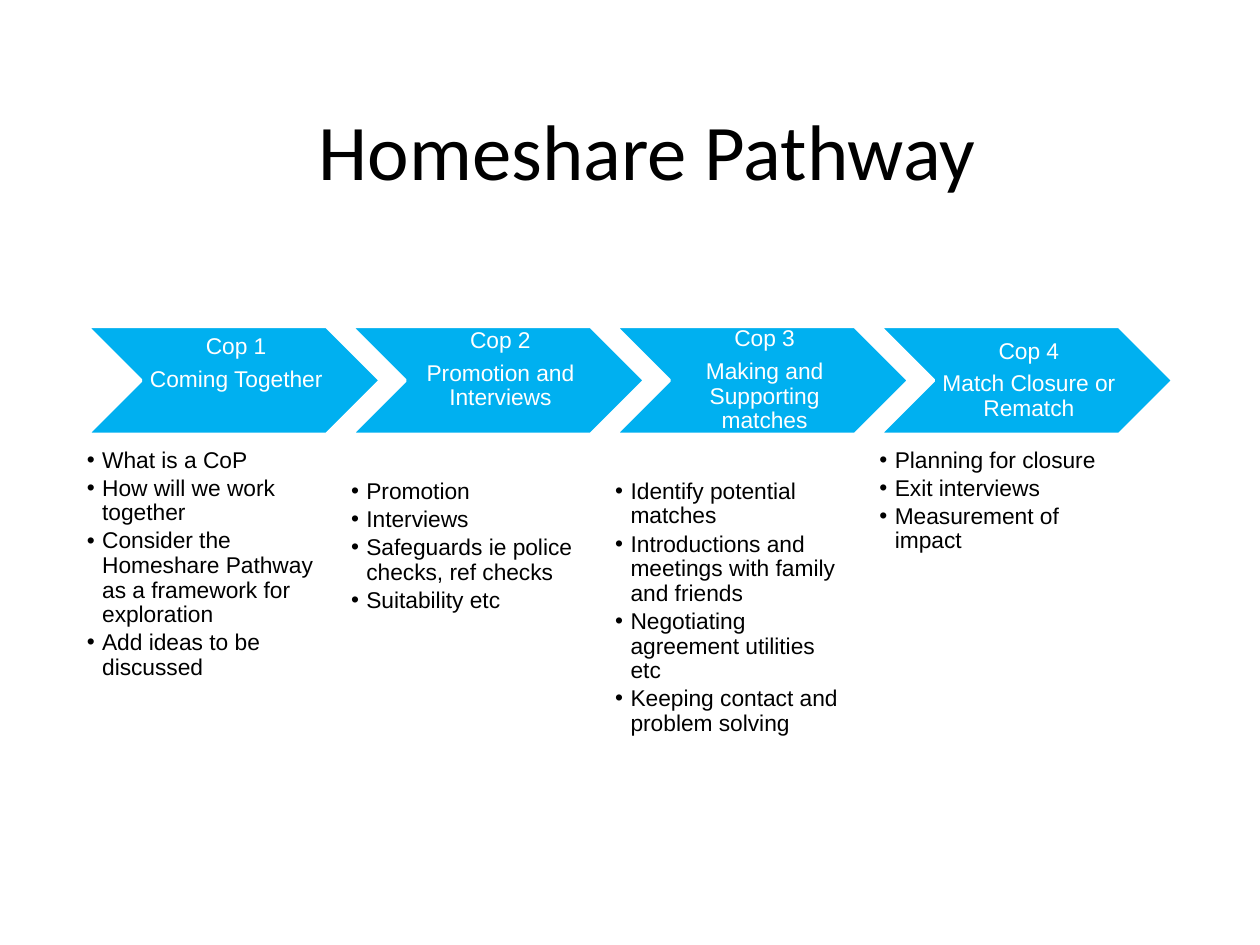
from lxml.etree import SubElement
from pptx import Presentation
from pptx.dml.color import RGBColor
from pptx.enum.shapes import MSO_SHAPE
from pptx.enum.text import MSO_ANCHOR, PP_ALIGN
from pptx.oxml.ns import qn
from pptx.util import Cm, Pt

COLORS = {"text": "000000", "blue": "00B0F0", "white": "FFFFFF"}
HEAD = {"size": Pt(13), "name": "Arial", "color": "white"}
BODY = {**HEAD, "color": "text"}
TITLE = {"size": Pt(45), "name": "Calibri", "color": "text"}
STEPS = [
    ("Cop 1", "Coming Together", MSO_ANCHOR.MIDDLE, 0.73, 0,
     ["What is a CoP", "How will we work together",
      "Consider the Homeshare Pathway as a framework for exploration",
      "Add ideas to be discussed"]),
    ("Cop 2", "Promotion and Interviews", MSO_ANCHOR.TOP, 0.05, 0.63,
     ["Promotion", "Interviews",
      "Safeguards ie police checks, ref checks", "Suitability etc"]),
    ("Cop 3", "Making and Supporting matches", MSO_ANCHOR.MIDDLE, 0.05, 0.63,
     ["Identify potential matches",
      "Introductions and meetings with family and friends",
      "Negotiating agreement utilities etc",
      "Keeping contact and problem solving"]),
    ("Cop 4", "Match Closure or Rematch", MSO_ANCHOR.MIDDLE, 0.05, 0,
     ["Planning for closure", "Exit interviews", "Measurement of impact"]),
]


def color(name):
    return RGBColor.from_string(COLORS[name])


def apply(item, values):
    for key, value in values.items():
        setattr(item, key, value)


def add_text(slide, box, lines, font, para, pads, anchor):
    frame = slide.shapes.add_textbox(*map(Cm, box)).text_frame
    left, top, right, bottom = map(Cm, pads)
    apply(frame, {"word_wrap": True, "vertical_anchor": anchor,
                  "margin_left": left, "margin_top": top,
                  "margin_right": right, "margin_bottom": bottom})
    for i, line in enumerate(lines):
        part = frame.add_paragraph() if i else frame.paragraphs[0]
        apply(part, {"line_spacing": 0.9, **para})
        run = part.add_run()
        run.text = line
        apply(run.font, {k: v for k, v in font.items() if k != "color"})
        run.font.color.rgb = color(font["color"])
    return frame


def add_title(slide, box):
    add_text(slide, box, ["Homeshare Pathway"], TITLE,
             {"alignment": PP_ALIGN.CENTER}, (0.94, 0.13, 0.25, 0.13),
             MSO_ANCHOR.MIDDLE)


def add_arrow(slide, box, lines, anchor, foot):
    left, top, width, height = box
    shape = slide.shapes.add_shape(MSO_SHAPE.CHEVRON, *map(Cm, box))
    shape.shadow.inherit = False
    shape.fill.solid()
    shape.fill.fore_color.rgb = color("blue")
    shape.line.color.rgb = color("white")
    shape.line.width = Pt(2)
    add_text(slide, (left + height / 2, top, width - height, height), lines,
             HEAD, {"alignment": PP_ALIGN.CENTER, "space_after": Pt(4.6)},
             (0.15, 0.05, 0.05, foot), anchor)


def add_list(slide, box, lines, gap):
    frame = add_text(slide, box, lines, BODY, {"space_after": Pt(2)},
                     (0, gap, 0, 0), MSO_ANCHOR.TOP)
    for part in frame.paragraphs:
        props = part._p.get_or_add_pPr()
        props.set("marL", str(Cm(0.31)))
        props.set("indent", str(-Cm(0.31)))
        tint = SubElement(props, qn("a:buClr"))
        SubElement(tint, qn("a:srgbClr"), val=COLORS["text"])
        SubElement(props, qn("a:buFont"), typeface="Arial")
        SubElement(props, qn("a:buChar"), char="•")


def add_path(slide, box):
    left, top, width, height = box
    arrow = 5.92
    pitch = (width - arrow) / (len(STEPS) - 1)
    for i, (name, topic, anchor, foot, gap, items) in enumerate(STEPS):
        x = left + i * pitch
        add_arrow(slide, (x, top, arrow, 2.18), [name, topic], anchor, foot)
        add_list(slide, (x, top + 2.46, 4.75, height - 2.46), items, gap)


def main():
    deck = Presentation()
    apply(deck, {"slide_width": Cm(25.4), "slide_height": Cm(19.05)})
    slide = deck.slides.add_slide(deck.slide_layouts[6])
    add_title(slide, (1.75, 1.55, 21.9, 3.15))
    add_path(slide, (1.75, 6.58, 21.9, 8))
    deck.save("out.pptx")


if __name__ == "__main__":
    main()
